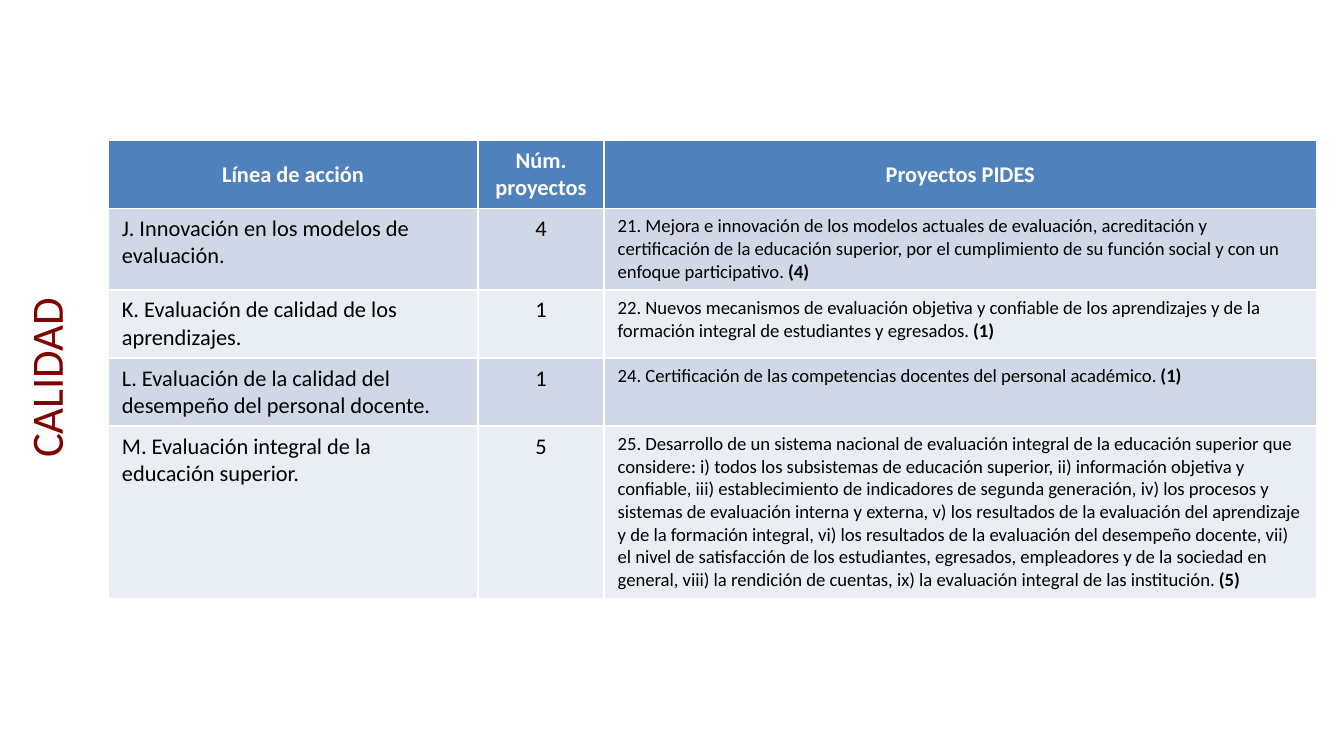
"""Build the CALIDAD slide: lines of action and their PIDES projects."""
from pptx import Presentation
from pptx.dml.color import RGBColor
from pptx.enum.text import MSO_ANCHOR, PP_ALIGN
from pptx.util import Cm, Pt

LEFT, CENTER = PP_ALIGN.LEFT, PP_ALIGN.CENTER
MIDDLE = MSO_ANCHOR.MIDDLE
WHITE = RGBColor(0xFF, 0xFF, 0xFF)
BLACK = RGBColor(0x00, 0x00, 0x00)
MAROON = RGBColor(0x80, 0x00, 0x00)
HEADER_BLUE = RGBColor(0x4F, 0x81, 0xBD)
BANDS = [RGBColor(0xD0, 0xD8, 0xE8), RGBColor(0xE9, 0xED, 0xF4)]

HEADINGS = ["Línea de acción", "Núm. proyectos", "Proyectos PIDES"]
ACTIONS = [
    ("J. Innovación en los modelos de evaluación.", 4,
     "21. Mejora e innovación de los modelos actuales de evaluación, acreditación y "
     "certificación de la educación superior, por el cumplimiento de su función social "
     "y con un enfoque participativo. "),
    ("K. Evaluación de calidad de los aprendizajes.", 1,
     "22. Nuevos mecanismos de evaluación objetiva y confiable de los aprendizajes y de "
     "la formación integral de estudiantes y egresados. "),
    ("L. Evaluación de la calidad del desempeño del personal docente.", 1,
     "24. Certificación de las competencias docentes del personal académico. "),
    ("M. Evaluación integral de la educación superior.", 5,
     "25. Desarrollo de un sistema nacional de evaluación integral de la educación "
     "superior que considere: i) todos los subsistemas de educación superior, "
     "ii) información objetiva y confiable, iii) establecimiento de indicadores de "
     "segunda generación, iv) los procesos y sistemas de evaluación interna y externa, "
     "v) los resultados de la evaluación del aprendizaje y de la formación integral, "
     "vi) los resultados de la evaluación del desempeño docente, vii) el nivel de "
     "satisfacción de los estudiantes, egresados, empleadores y de la sociedad en "
     "general, viii) la rendición de cuentas, ix) la evaluación integral de las "
     "institución. "),
]
COLUMN_WIDTHS = [6.98, 2.39, 13.46]
ROW_HEIGHTS = [1.26, 1.54, 1.28, 1.28, 3.24]


def write(para, text, size=12, color=BLACK, bold=False, align=LEFT):
    para.alignment = align
    span = para.add_run()
    span.text = text
    span.font.name = "Calibri"
    span.font.size = Pt(size)
    span.font.bold = bold
    span.font.color.rgb = color


deck = Presentation()
deck.slide_width, deck.slide_height = Cm(25.4), Cm(14.28)
page = deck.slides.add_slide(deck.slide_layouts[5])

title = page.shapes.title
title.left, title.top, title.width, title.height = Cm(-6.3), Cm(5.94), Cm(14.3), Cm(2.39)
title.rotation = 270
title.text_frame.vertical_anchor = MIDDLE
write(title.text_frame.paragraphs[0], "CALIDAD", size=24, color=MAROON, align=CENTER)

table = page.shapes.add_table(
    len(ROW_HEIGHTS), len(COLUMN_WIDTHS), Cm(2.05), Cm(2.65),
    Cm(sum(COLUMN_WIDTHS)), Cm(sum(ROW_HEIGHTS))).table
for column, width in zip(table.columns, COLUMN_WIDTHS):
    column.width = Cm(width)
for row, height in zip(table.rows, ROW_HEIGHTS):
    row.height = Cm(height)

for cell, heading in zip(table.rows[0].cells, HEADINGS):
    cell.fill.solid()
    cell.fill.fore_color.rgb = HEADER_BLUE
    cell.vertical_anchor = MIDDLE
    write(cell.text_frame.paragraphs[0], heading, color=WHITE, bold=True, align=CENTER)

for index, (action, count, projects) in enumerate(ACTIONS):
    cells = list(table.rows[index + 1].cells)
    for cell in cells:
        cell.fill.solid()
        cell.fill.fore_color.rgb = BANDS[index % 2]
    action_para, count_para, projects_para = [cell.text_frame.paragraphs[0] for cell in cells]
    write(action_para, action)
    write(count_para, str(count), align=CENTER)
    projects_para.space_before = projects_para.space_after = Pt(3)
    write(projects_para, projects, size=10)
    write(projects_para, f"({count})", size=10, bold=True)

deck.save("out.pptx")
